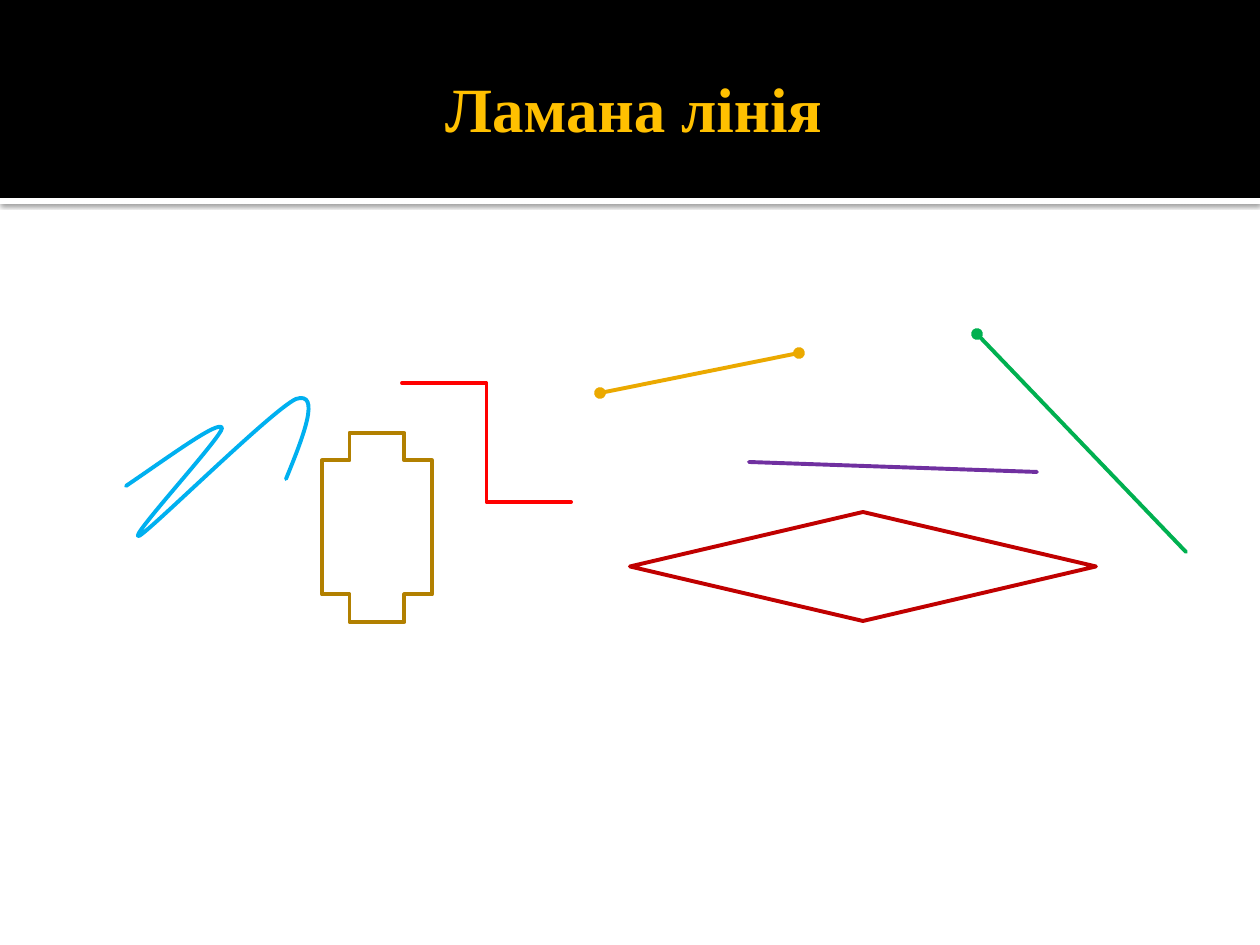
from lxml.etree import SubElement
from pptx import Presentation
from pptx.dml.color import RGBColor
from pptx.enum.shapes import MSO_CONNECTOR, MSO_SHAPE
from pptx.enum.text import MSO_ANCHOR, MSO_AUTO_SIZE, PP_ALIGN
from pptx.oxml.ns import qn
from pptx.util import Pt

PX = 914400 / 126
SLIDE_SIZE = (1260, 945)

THEME = {
    "font": "Times New Roman", "title_size": 36, "line_width": 2.25,
    "black": "000000", "white": "FFFFFF", "title": "FFC000",
    "blue": "00B0F0", "red": "FF0000", "amber": "EBA900", "purple": "7030A0",
    "green": "00B050", "brown": "B28000", "crimson": "C00000",
}

# Content: boxes are left, top, width, height
TITLE = "Ламана лінія"
TITLE_BOX = (63, 21, 1134, 173)
TITLE_INSETS = (13, 6, 6, 6)
BANDS = [((0, 198, 1260, 6), "white"), ((0, 0, 1260, 198), "black")]

# Start point, then two control points and an end point per curve segment
SCRIBBLE = [
    (126, 486),
    (173, 454), (219, 420), (222, 428),
    (223, 436), (126, 541), (139, 536),
    (151, 530), (272, 410), (296, 399),
    (321, 391), (304, 435), (286, 479),
]
# Kind, start, end, colour, dotted ends
LINES = [
    (MSO_CONNECTOR.ELBOW, (402, 383), (571, 502), "red", ()),
    (MSO_CONNECTOR.STRAIGHT, (600, 393), (799, 353), "amber", ("headEnd", "tailEnd")),
    (MSO_CONNECTOR.STRAIGHT, (749, 462), (1037, 472), "purple", ()),
    (MSO_CONNECTOR.STRAIGHT, (977, 334), (1186, 552), "green", ("headEnd",)),
]
OUTLINES = [
    (MSO_SHAPE.CROSS, (322, 433, 110, 189), "brown"),
    (MSO_SHAPE.FLOWCHART_DECISION, (630, 512, 466, 109), "crimson"),
]


def emu(values):
    return [round(value * PX) for value in values]


def colour(name):
    return RGBColor.from_string(THEME[name])


def add_filled(slide, kind, box, fill):
    shape = slide.shapes.add_shape(kind, *emu(box))
    shape.shadow.inherit = False
    shape.fill.solid()
    shape.fill.fore_color.rgb = colour(fill)
    return shape


def style_line(shape, name, dotted_ends=()):
    shape.line.color.rgb = colour(name)
    shape.line.width = Pt(THEME["line_width"])
    line = shape.line._get_or_add_ln()
    line.set("cap", "rnd")
    SubElement(line, qn("a:round"))
    for end in dotted_ends:
        SubElement(line, qn(f"a:{end}"), type="oval")


def add_soft_shadow(shape):
    effects = shape._element.spPr.find(qn("a:effectLst"))
    shadow = SubElement(effects, qn("a:outerShdw"), blurRad=str(Pt(2.5)),
                        dist=str(Pt(0.8)), dir="5400000", rotWithShape="0")
    shade = SubElement(shadow, qn("a:srgbClr"), val=THEME["black"])
    SubElement(shade, qn("a:alpha"), val="60000")


def add_curve(slide, points, name):
    builder = slide.shapes.build_freeform(*points[0], scale=PX)
    builder.add_line_segments(points[1:], close=False)
    shape = builder.convert_to_shape()
    shape.shadow.inherit = False
    shape.fill.background()
    style_line(shape, name)
    # Join each three straight steps into one Bezier segment
    path = next(shape._element.iter(qn("a:path")))
    steps = path.findall(qn("a:lnTo"))
    for first in range(0, len(steps), 3):
        curve = SubElement(path, qn("a:cubicBezTo"))
        for step in steps[first:first + 3]:
            curve.append(step[0])
            path.remove(step)


def fill_title(slide):
    title = slide.shapes.title
    title.left, title.top, title.width, title.height = emu(TITLE_BOX)
    frame = title.text_frame
    frame.text = TITLE
    frame.word_wrap = True
    frame.auto_size = MSO_AUTO_SIZE.NONE
    frame.vertical_anchor = MSO_ANCHOR.MIDDLE
    (frame.margin_left, frame.margin_top,
     frame.margin_right, frame.margin_bottom) = emu(TITLE_INSETS)
    paragraph = frame.paragraphs[0]
    paragraph.alignment = PP_ALIGN.CENTER
    font = paragraph.font
    font.name, font.size, font.bold = THEME["font"], Pt(THEME["title_size"]), True
    font.color.rgb = colour("title")
    # Bring the title in front of the bands
    slide.shapes._spTree.append(title._element)


def main():
    presentation = Presentation()
    presentation.slide_width, presentation.slide_height = emu(SLIDE_SIZE)
    slide = presentation.slides.add_slide(presentation.slide_layouts[5])

    # Header
    bands = [add_filled(slide, MSO_SHAPE.RECTANGLE, box, fill) for box, fill in BANDS]
    for band in bands:
        band.line.fill.background()
    add_soft_shadow(bands[0])
    fill_title(slide)

    # Curve, lines and closed figures
    add_curve(slide, SCRIBBLE, "blue")
    for kind, start, end, name, dotted_ends in LINES:
        connector = slide.shapes.add_connector(kind, *emu(start + end))
        style_line(connector, name, dotted_ends)
        SubElement(connector._element.spPr, qn("a:effectLst"))
    for kind, box, name in OUTLINES:
        style_line(add_filled(slide, kind, box, "white"), name)

    presentation.save("out.pptx")


if __name__ == "__main__":
    main()
